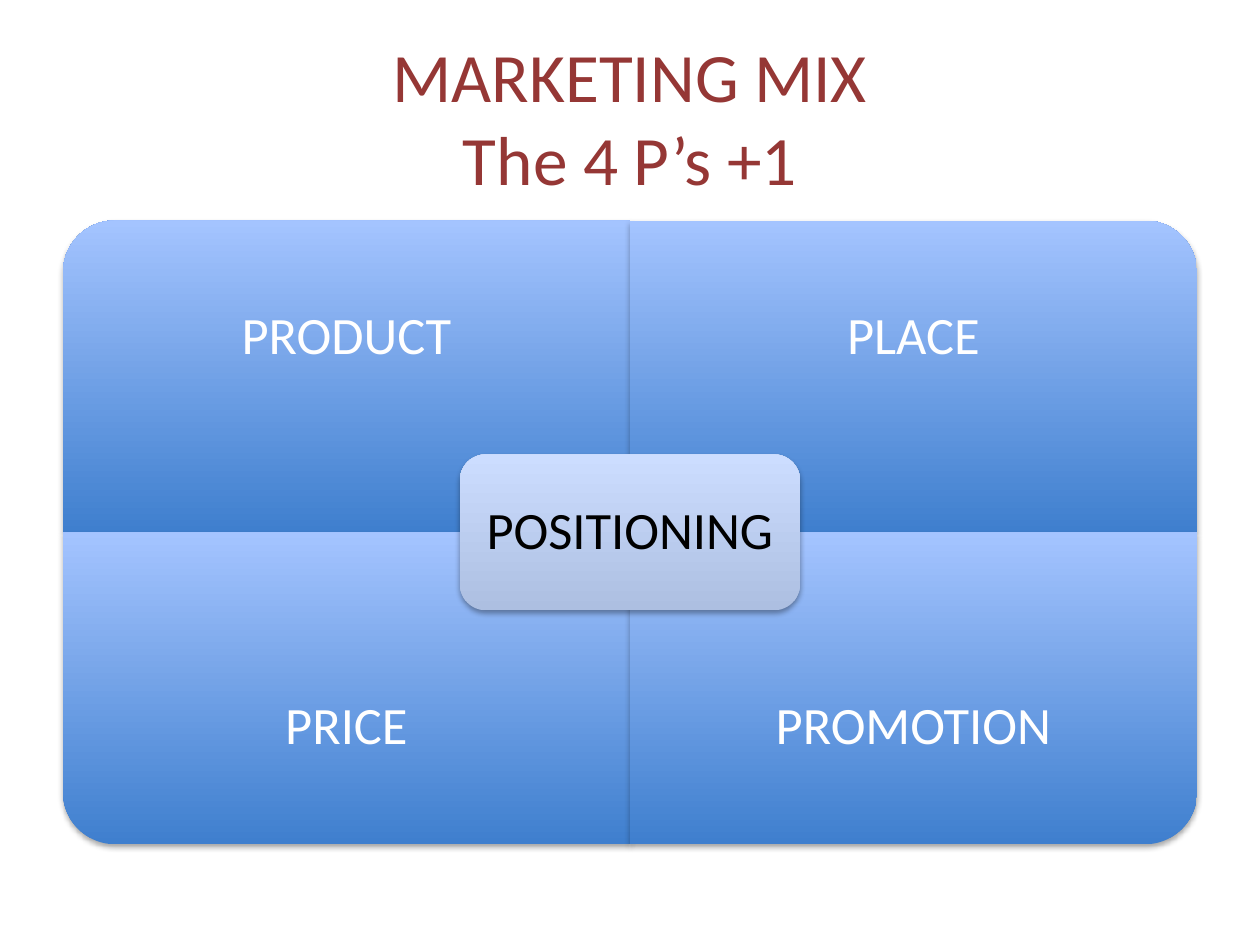
from lxml.etree import SubElement
from pptx import Presentation
from pptx.dml.color import RGBColor
from pptx.enum.shapes import MSO_SHAPE as Shape
from pptx.enum.text import MSO_ANCHOR as Anchor, PP_ALIGN as Align
from pptx.oxml.ns import qn
from pptx.util import Inches, Pt

COLORS = {
    "title": "953735",
    "tile_bottom": "3F7FCE",
    "tile_top": "A4C4FF",
    "hub_bottom": "ADBFE1",
    "hub_top": "CCDDFF",
    "tile_text": "FFFFFF",
    "hub_text": "000000",
    "shadow": "000000",
}
LEFT, TOP = 0.5, 1.75
COLUMN, ROW = 4.5, 2.475
# label, column, row, rotation that turns the round corner outwards
TILES = [
    ("PRODUCT", 0, 0, 270),
    ("PLACE", 1, 0, 0),
    ("PRICE", 0, 1, 180),
    ("PROMOTION", 1, 1, 90),
]


def color(name):
    return RGBColor.from_string(COLORS[name])


def add_shadow(shape):
    shape.shadow.inherit = False
    effects = shape._element.spPr.find(qn("a:effectLst"))
    shadow = SubElement(effects, qn("a:outerShdw"), blurRad=str(Pt(3.1)),
                        dist=str(Pt(1.8)), dir="5400000", rotWithShape="0")
    tint = SubElement(shadow, qn("a:srgbClr"), val=COLORS["shadow"])
    SubElement(tint, qn("a:alpha"), val="35000")


def add_panel(slide, kind, center, width, height, role, rotation=0):
    """Add a panel whose gradient stays upright when the panel is turned."""
    if rotation % 180:
        width, height = height, width
    x, y = center
    shape = slide.shapes.add_shape(kind, Inches(x - width / 2), Inches(y - height / 2),
                                   Inches(width), Inches(height))
    shape.rotation = rotation
    shape.line.fill.background()
    shape.fill.gradient()
    shape.fill.gradient_angle = 90
    for stop, end, position in zip(shape.fill.gradient_stops, ("bottom", "top"), (0, 1)):
        stop.color.rgb = color(f"{role}_{end}")
        stop.position = position
    shape._element.spPr.find(qn("a:gradFill")).set("rotWithShape", "0")
    add_shadow(shape)


def add_label(slide, text, center, width, height, inset, role):
    x, y = center
    box = slide.shapes.add_textbox(Inches(x - width / 2), Inches(y - height / 2),
                                   Inches(width), Inches(height))
    frame = box.text_frame
    frame.word_wrap = True
    frame.vertical_anchor = Anchor.MIDDLE
    frame.margin_left = frame.margin_right = Inches(inset)
    frame.margin_top = frame.margin_bottom = Inches(inset)
    paragraph = frame.paragraphs[0]
    paragraph.text = text
    paragraph.alignment = Align.CENTER
    paragraph.line_spacing = 0.9
    paragraph.font.name = "Calibri"
    paragraph.font.size = Pt(30)
    paragraph.font.color.rgb = color(f"{role}_text")


def set_title(slide, text):
    title = slide.shapes.title
    title.left, title.top = Inches(LEFT), Inches(0.3)
    title.width, title.height = Inches(2 * COLUMN), Inches(1.25)
    title.text_frame.vertical_anchor = Anchor.MIDDLE
    paragraph = title.text_frame.paragraphs[0]
    paragraph.text = text
    paragraph.alignment = Align.CENTER
    paragraph.font.name = "Calibri"
    paragraph.font.size = Pt(39.6)
    paragraph.font.color.rgb = color("title")


def add_tile(slide, text, column, row, rotation):
    """Add a quadrant with its label in the outer three quarters."""
    x, y = LEFT + (column + 0.5) * COLUMN, TOP + (row + 0.5) * ROW
    add_panel(slide, Shape.ROUND_1_RECTANGLE, (x, y), COLUMN, ROW, "tile", rotation)
    label_y = y + (row - 0.5) * ROW / 4
    add_label(slide, text, (x, label_y), COLUMN, ROW * 0.75, 0.23, "tile")


def add_hub(slide, text):
    center = LEFT + COLUMN, TOP + ROW
    width, height = COLUMN * 0.6, ROW / 2
    add_panel(slide, Shape.ROUNDED_RECTANGLE, center, width, height, "hub")
    add_label(slide, text, center, width - 0.12, height - 0.12, 0.12, "hub")


def main():
    presentation = Presentation()
    presentation.slide_width, presentation.slide_height = Inches(10), Inches(7.5)
    slide = presentation.slides.add_slide(presentation.slide_layouts[5])
    set_title(slide, "MARKETING MIX\vThe 4 P’s +1")
    for tile in TILES:
        add_tile(slide, *tile)
    add_hub(slide, "POSITIONING")
    presentation.save("out.pptx")


if __name__ == "__main__":
    main()
